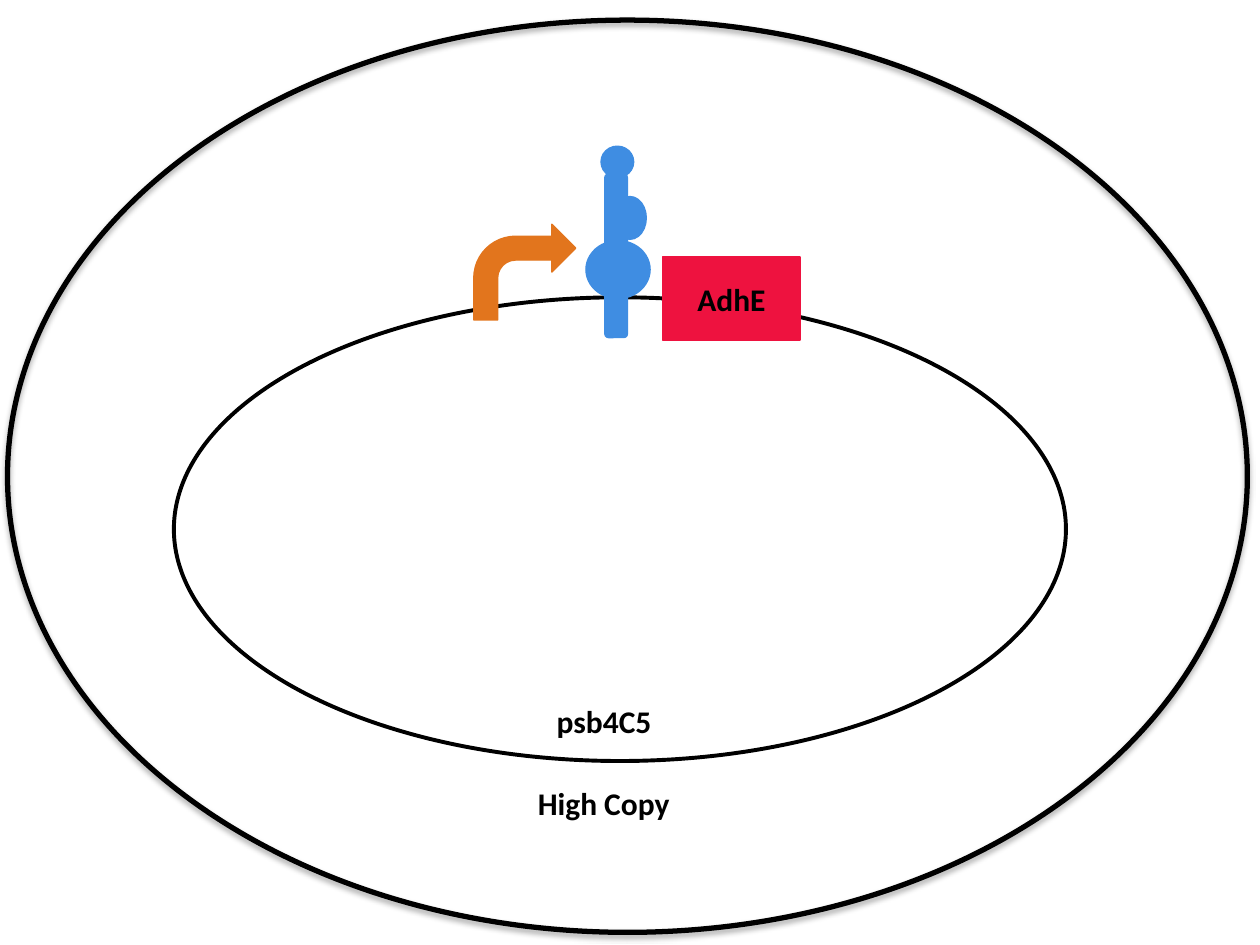
from lxml.etree import SubElement
from pptx import Presentation
from pptx.dml.color import RGBColor
from pptx.enum.shapes import MSO_SHAPE
from pptx.enum.text import MSO_ANCHOR, MSO_AUTO_SIZE, PP_ALIGN
from pptx.oxml.ns import qn
from pptx.util import Inches, Pt

BLACK, BLUE, ORANGE, RED = "000000", "3F8DE2", "E2751D", "EE123F"

# Content: boxes are left, top, width, height in inches
PLASMID = (1.38, 2.36, 7.08, 3.68)
CELL = (0.06, 0.16, 9.84, 7.24)
PARTS = [  # kind, box, colour
    (MSO_SHAPE.ROUNDED_RECTANGLE, (4.8, 1.38, 0.18, 1.3), BLUE),
    (MSO_SHAPE.OVAL, (4.65, 1.91, 0.51, 0.46), BLUE),
    (MSO_SHAPE.OVAL, (4.87, 1.56, 0.26, 0.34), BLUE),
    (MSO_SHAPE.OVAL, (4.77, 1.16, 0.26, 0.25), BLUE),
    (MSO_SHAPE.BENT_ARROW, (3.76, 1.78, 0.81, 0.76), ORANGE),
]
GENE = ("AdhE", (5.26, 2.04, 1.09, 0.66))
LABELS = [
    ("High Copy", (4.17, 6.17, 1.27, 0.4)),
    ("psb4C5", (4.32, 5.52, 0.96, 0.4)),
]


def rgb(value):
    return RGBColor.from_string(value)


def add_shape(slide, kind, box, line, width=0.75, fill=None):
    sp = slide.shapes.add_shape(kind, *map(Inches, box))
    sp.shadow.inherit = False
    sp.line.color.rgb = rgb(line)
    sp.line.width = Pt(width)
    if fill:
        sp.fill.solid()
        sp.fill.fore_color.rgb = rgb(fill)
    else:
        sp.fill.background()
    return sp


def set_text(sp, text, align):
    p = sp.text_frame.paragraphs[0]
    p.text = text
    p.alignment = align
    p.font.name = "Calibri"
    p.font.size = Pt(18)
    p.font.bold = True
    p.font.color.rgb = rgb(BLACK)


def add_shadow(sp):
    effects = sp._element.spPr.find(qn("a:effectLst"))
    shadow = SubElement(effects, qn("a:outerShdw"), blurRad=str(Pt(3.1)),
                        dist=str(Pt(1.8)), dir="5400000", rotWithShape="0")
    color = SubElement(shadow, qn("a:srgbClr"), val=BLACK)
    SubElement(color, qn("a:alpha"), val="35000")


prs = Presentation()
prs.slide_width, prs.slide_height = Inches(10), Inches(7.5)
s = prs.slides.add_slide(prs.slide_layouts[6])

# Plasmid ring with promoter and binding site
add_shape(s, MSO_SHAPE.OVAL, PLASMID, BLACK, 2.25)
for kind, box, color in PARTS:
    add_shape(s, kind, box, color, fill=color)

# Gene
text, box = GENE
gene = add_shape(s, MSO_SHAPE.RECTANGLE, box, RED, fill=RED)
gene.text_frame.vertical_anchor = MSO_ANCHOR.MIDDLE
set_text(gene, text, PP_ALIGN.CENTER)

# Cell outline
add_shadow(add_shape(s, MSO_SHAPE.OVAL, CELL, BLACK, 3))

# Labels
for text, box in LABELS:
    label = s.shapes.add_textbox(*map(Inches, box))
    label.text_frame.word_wrap = False
    label.text_frame.auto_size = MSO_AUTO_SIZE.SHAPE_TO_FIT_TEXT
    set_text(label, text, PP_ALIGN.LEFT)

prs.save("out.pptx")
